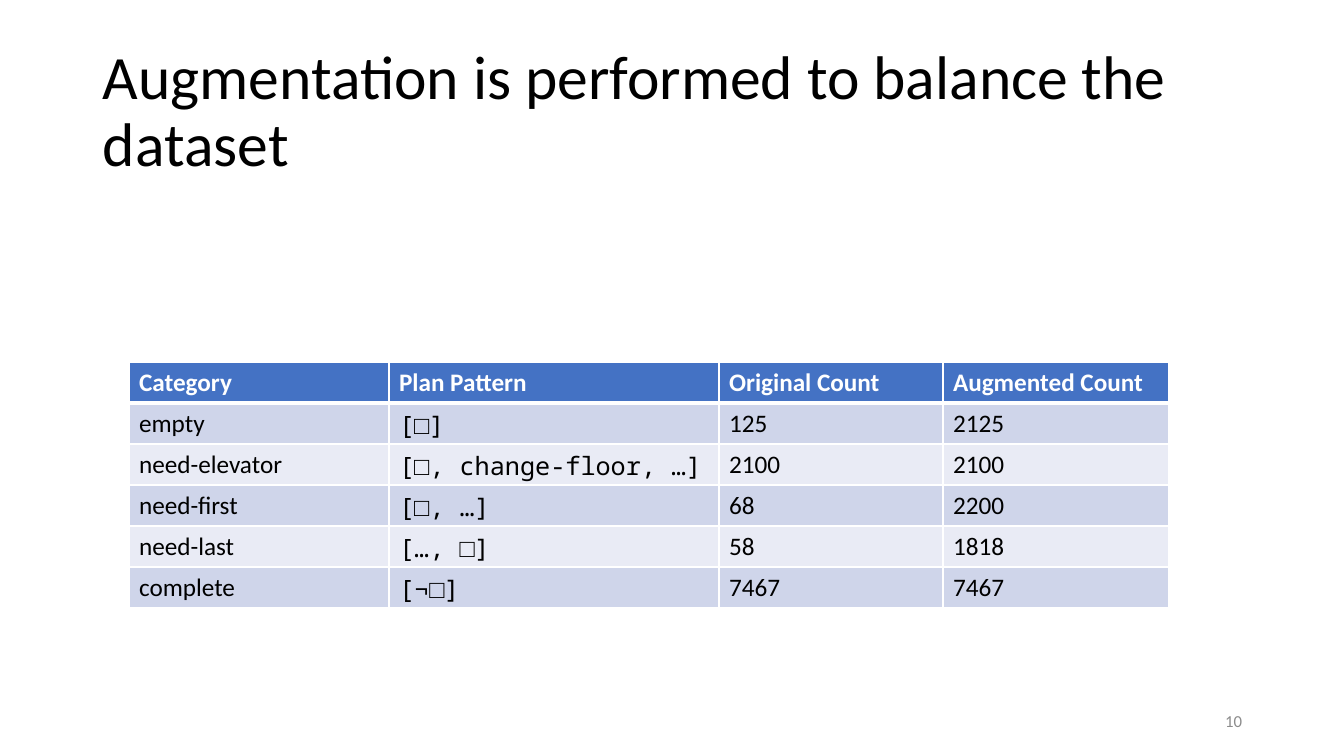
from lxml import etree
from pptx import Presentation
from pptx.dml.color import RGBColor
from pptx.enum.text import MSO_ANCHOR, PP_ALIGN
from pptx.oxml.ns import qn
from pptx.util import Pt

MIDDLE = MSO_ANCHOR.MIDDLE
LEFT, RIGHT = PP_ALIGN.LEFT, PP_ALIGN.RIGHT

# Content
TITLE = "Augmentation is performed to balance the dataset"
PAGE_NUMBER = "10"
HEADINGS = ["Category", "Plan Pattern", "Original Count", "Augmented Count"]
CATEGORIES = [
    ("empty", "[□]", "125", "2125"),
    ("need-elevator", "[□, change-floor, …]", "2100", "2100"),
    ("need-first", "[□, …]", "68", "2200"),
    ("need-last", "[…, □]", "58", "1818"),
    ("complete", "[¬□]", "7467", "7467"),
]
PATTERN_COLUMN = HEADINGS.index("Plan Pattern")

# Look
BODY_FONT, PATTERN_FONT = "Calibri", "Noto Sans Mono"
COLORS = {
    "text": "000000",
    "white": "FFFFFF",
    "header": "4472C4",
    "band_dark": "CFD5EA",
    "band_light": "E9EBF5",
    "page_number": "8C8C8C",
}

# Layout in px
EMU_PER_PX = 914400 / 100.8
SLIDE_SIZE = (1344, 756)
TITLE_BOX = (93, 40, 1159, 146)
PAGE_NUMBER_BOX = (950, 701, 302, 40)
TABLE_LEFT, TABLE_TOP = 129, 362
COLUMN_WIDTHS = [260, 330, 224, 226]
ROW_HEIGHT = 41


def px(length):
    return round(length * EMU_PER_PX)


def write(frame, text, size, color, font=BODY_FONT, bold=False, align=LEFT):
    paragraph = frame.paragraphs[0]
    paragraph.text = text
    paragraph.alignment = align
    paragraph.font.name = font
    paragraph.font.size = Pt(size)
    paragraph.font.bold = bold
    paragraph.font.color.rgb = RGBColor.from_string(COLORS[color])
    return paragraph


def add_text(slide, box, text, size, color, align=LEFT):
    frame = slide.shapes.add_textbox(*map(px, box)).text_frame
    frame.word_wrap = True
    frame.vertical_anchor = MIDDLE
    return write(frame, text, size, color, align=align)


def set_borders(cell, widths):
    properties = cell._tc.get_or_add_tcPr()
    for side, width in widths.items():
        line = etree.SubElement(properties, qn(f"a:ln{side}"), w=str(Pt(width)))
        fill = etree.SubElement(line, qn("a:solidFill"))
        etree.SubElement(fill, qn("a:srgbClr"), val=COLORS["white"])


def add_counts_table(slide):
    rows = [HEADINGS, *CATEGORIES]
    table = slide.shapes.add_table(
        len(rows), len(HEADINGS), px(TABLE_LEFT), px(TABLE_TOP),
        px(sum(COLUMN_WIDTHS)), px(ROW_HEIGHT * len(rows)),
    ).table
    for column, width in zip(table.columns, COLUMN_WIDTHS):
        column.width = px(width)
    for r, values in enumerate(rows):
        table.rows[r].height = px(ROW_HEIGHT)
        is_header = r == 0
        band = "header" if is_header else "band_dark" if r % 2 else "band_light"
        for c, value in enumerate(values):
            cell = table.cell(r, c)
            # The rule under the header is thicker than the grid
            set_borders(cell, {"L": 1, "R": 1, "T": 3 if r == 1 else 1,
                               "B": 3 if is_header else 1})
            cell.fill.solid()
            cell.fill.fore_color.rgb = RGBColor.from_string(COLORS[band])
            is_pattern = c == PATTERN_COLUMN and not is_header
            write(cell.text_frame, value, 18,
                  "white" if is_header else "text",
                  font=PATTERN_FONT if is_pattern else BODY_FONT,
                  bold=is_header)


def main():
    deck = Presentation()
    deck.slide_width, deck.slide_height = map(px, SLIDE_SIZE)
    slide = deck.slides.add_slide(deck.slide_layouts[6])

    title = add_text(slide, TITLE_BOX, TITLE, 44, "text")
    title.line_spacing = 0.9
    add_counts_table(slide)
    add_text(slide, PAGE_NUMBER_BOX, PAGE_NUMBER, 12, "page_number", RIGHT)

    deck.save("out.pptx")


if __name__ == "__main__":
    main()
